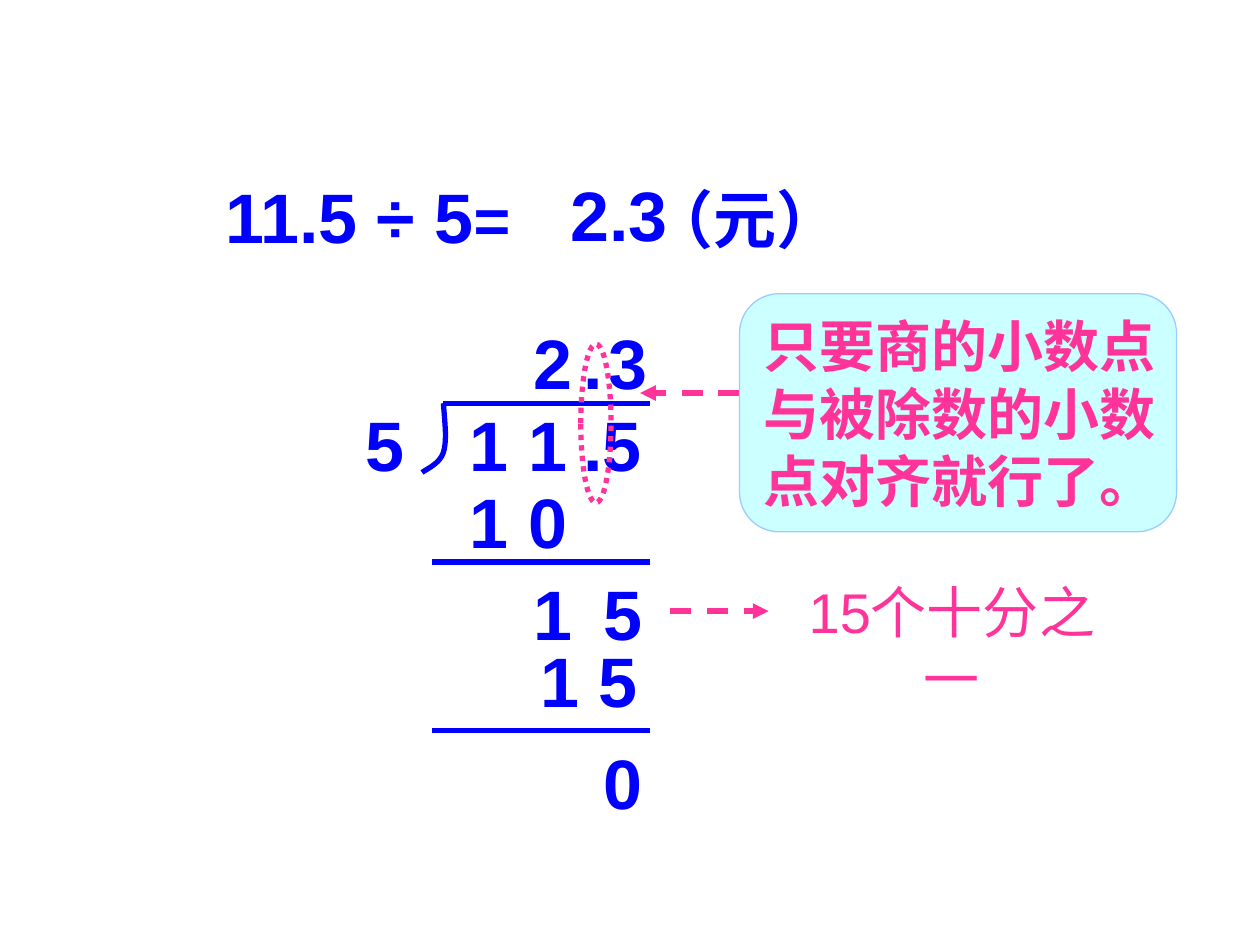
from dataclasses import dataclass

from lxml import etree
from pptx import Presentation
from pptx import util as u
from pptx.dml.color import RGBColor
from pptx.enum import dml, shapes, text
from pptx.oxml.ns import qn

Pt = u.Pt


@dataclass(frozen=True)
class Theme:
    font: str = "Arial"
    blue: str = "0000FF"
    pink: str = "FF3399"
    callout_fill: str = "CCFFFF"
    callout_line: str = "99CCFF"
    digit: float = 40
    unit: float = 36
    remark: float = 32
    stroke: float = 3
    hairline: float = 0.75


class Board:
    """Draws on one slide in one style; all lengths are points."""

    def __init__(self, page, theme):
        self.page = page
        self.theme = theme

    def style_font(self, para, size, color, bold):
        font = para.font
        font.name, font.size, font.bold = self.theme.font, Pt(size), bold
        font.color.rgb = RGBColor.from_string(color)

    def style_line(self, shape, color, width, dash=None):
        shape.line.color.rgb = RGBColor.from_string(color)
        shape.line.width = Pt(width)
        if dash:
            shape.line.dash_style = dash

    def label(self, wording, left, top, width, height=55.4, size=None,
              color=None, bold=True, wrap=False, align=text.PP_ALIGN.CENTER):
        box = self.page.shapes.add_textbox(Pt(left), Pt(top), Pt(width), Pt(height))
        frame = box.text_frame
        frame.word_wrap = wrap
        frame.auto_size = text.MSO_AUTO_SIZE.SHAPE_TO_FIT_TEXT
        para = frame.paragraphs[0]
        para.text = wording
        para.alignment = align
        self.style_font(para, size or self.theme.digit, color or self.theme.blue, bold)

    def equation(self, start, equals, unit, left, top, width, blank_end):
        """An equation whose blank is an underlined tab."""
        box = self.page.shapes.add_textbox(Pt(left), Pt(top), Pt(width), Pt(55.4))
        box.text_frame.word_wrap = True
        para = box.text_frame.paragraphs[0]
        tabs = etree.SubElement(para._p.get_or_add_pPr(), qn("a:tabLst"))
        etree.SubElement(tabs, qn("a:tab"), pos=str(Pt(blank_end)), algn="l")
        self.style_font(para, self.theme.digit, self.theme.blue, True)
        for wording in (start, equals, "\t", unit):
            span = para.add_run()
            span.text = wording
            if wording != start:
                span.font.size = Pt(self.theme.unit)
            span.font.underline = wording == "\t"

    def rule(self, x1, y1, x2, y2, color=None, dash=None, arrow=False):
        line = self.page.shapes.add_connector(
            shapes.MSO_CONNECTOR.STRAIGHT, Pt(x1), Pt(y1), Pt(x2), Pt(y2))
        self.style_line(line, color or self.theme.blue, self.theme.stroke, dash)
        if arrow:
            etree.SubElement(line.line._get_or_add_ln(), qn("a:tailEnd"), type="triangle")
        etree.SubElement(line._element.spPr, qn("a:effectLst"))

    def arrow(self, x1, x2, y):
        self.rule(x1, y, x2, y, self.theme.pink, dml.MSO_LINE.DASH, arrow=True)

    def curve(self, start, *segments, steps=10):
        """Joined cubic curves, each given by two controls and an end."""
        points = []
        p0 = start
        for p1, p2, p3 in segments:
            for step in range(1, steps + 1):
                t = step / steps
                s = 1 - t
                points.append(tuple(
                    Pt(s**3 * a + 3 * s * s * t * b + 3 * s * t * t * c + t**3 * d)
                    for a, b, c, d in zip(p0, p1, p2, p3)))
            p0 = p3
        builder = self.page.shapes.build_freeform(Pt(start[0]), Pt(start[1]))
        builder.add_line_segments(points, close=False)
        shape = builder.convert_to_shape()
        shape.shadow.inherit = False
        shape.fill.background()
        self.style_line(shape, self.theme.blue, self.theme.stroke)

    def ring(self, left, top, width, height):
        shape = self.page.shapes.add_shape(
            shapes.MSO_SHAPE.OVAL, Pt(left), Pt(top), Pt(width), Pt(height))
        shape.shadow.inherit = False
        shape.fill.background()
        self.style_line(shape, self.theme.pink, self.theme.stroke, dml.MSO_LINE.ROUND_DOT)

    def callout(self, lines, left, top, width, height):
        shape = self.page.shapes.add_shape(
            shapes.MSO_SHAPE.ROUNDED_RECTANGLE, Pt(left), Pt(top), Pt(width), Pt(height))
        shape.shadow.inherit = False
        shape.fill.solid()
        shape.fill.fore_color.rgb = RGBColor.from_string(self.theme.callout_fill)
        self.style_line(shape, self.theme.callout_line, self.theme.hairline)
        frame = shape.text_frame
        frame.word_wrap = False
        frame.vertical_anchor = text.MSO_ANCHOR.MIDDLE
        frame.text = "\n".join(lines)
        for para in frame.paragraphs:
            para.alignment = text.PP_ALIGN.LEFT
            self.style_font(para, self.theme.remark, self.theme.pink, True)


def main():
    theme = Theme()
    deck = Presentation()
    deck.slide_width, deck.slide_height = Pt(720), Pt(540)
    board = Board(deck.slides.add_slide(deck.slide_layouts[6]), theme)

    # Equation and its answer
    board.equation("11.5 ÷ 5", "=", "（元）", 121.7, 95.8, 484.6, blank_end=242.8)
    board.label("2.3", 319, 94.3, 69.8)

    # Long division: digits, row by row
    one, pair, point = 36.7, 69.8, 25.2
    rows = [
        (179.3, [("2", 297.4, one), (".", 326.2, point), ("3", 340.6, one)]),
        (226.1, [("5", 201.6, one), ("1 1", 261.4, pair), (".5", 326.2, 47.8)]),
        (270, [("1 0", 261.4, pair)]),
        (322.6, [("1", 297.4, one), ("5", 337.7, one)]),
        (360.7, [("1 5", 301.7, pair)]),
        (419, [("0", 337.7, one)]),
    ]
    for top, digits in rows:
        for wording, left, width in digits:
            board.label(wording, left, top, width)

    # Division bracket and subtraction rules
    right = 371.5
    board.rule(253.4, 230.4, right, 230.4)
    board.curve((253.4, 230.4),
                ((254.2, 241.2), (255.6, 252), (253.4, 258.5)),
                ((251.3, 265), (244.1, 267.8), (241.2, 270)))
    for y in (321.1, 417.6):
        board.rule(247, y, right, y)

    # Remark on the remainder
    board.arrow(383, 439.2, 349.2)
    board.label("15个十分之一", 439.2, 326.2, 209.5, 45.4,
                theme.remark, theme.pink, bold=False, wrap=True)

    # Aligned decimal points and their explanation
    board.ring(331.9, 196.6, 17.3, 90.7)
    board.arrow(422.6, 365.8, 224.6)
    board.callout(["只要商的小数点", "与被除数的小数", "点对齐就行了。"],
                  422.6, 167.8, 249.8, 136.1)

    deck.save("out.pptx")


if __name__ == "__main__":
    main()
